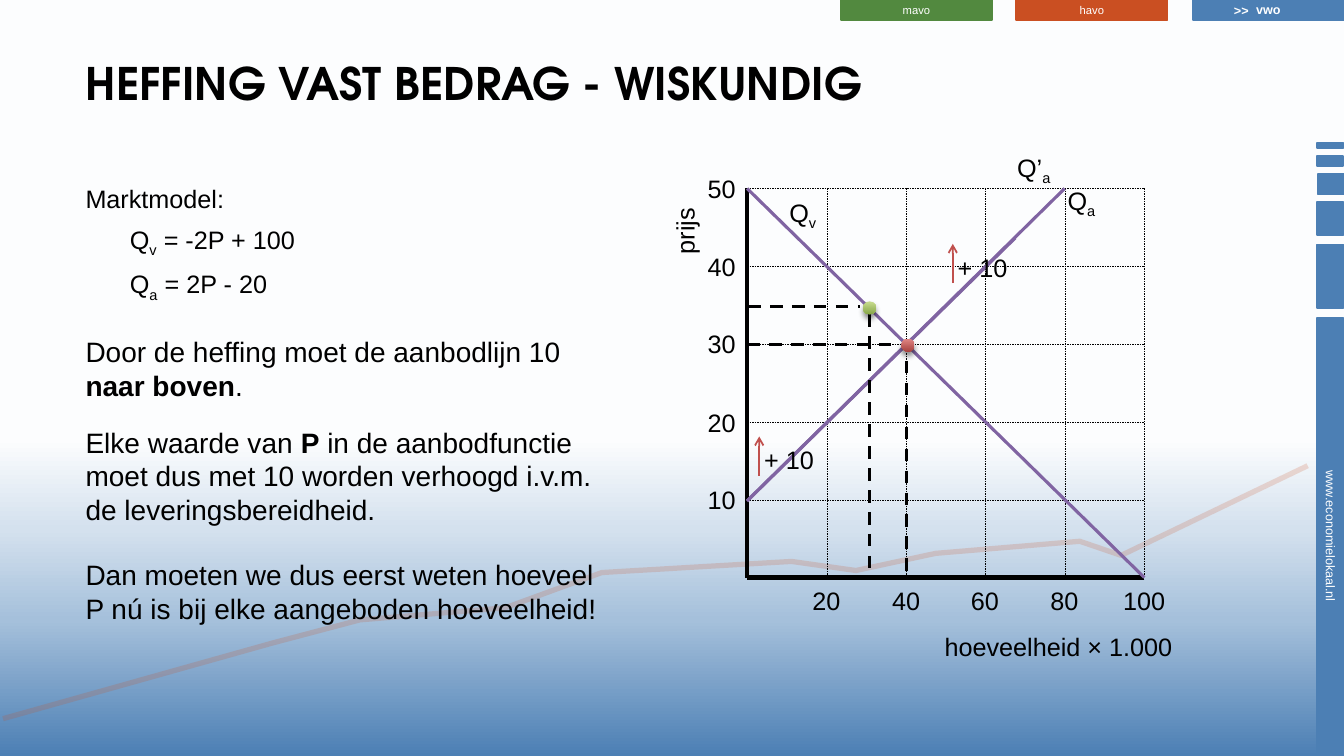
from dataclasses import dataclass

from lxml import etree
from pptx import Presentation
from pptx.dml.color import RGBColor
from pptx.enum.dml import MSO_LINE
from pptx.enum.shapes import MSO_CONNECTOR, MSO_SHAPE
from pptx.enum.text import MSO_ANCHOR, MSO_AUTO_SIZE, PP_ALIGN
from pptx.oxml.ns import qn
from pptx.util import Pt

PX = 9144  # EMU per px, 100 px to the inch
RECTANGLE, OVAL = MSO_SHAPE.RECTANGLE, MSO_SHAPE.OVAL
STRAIGHT, DASH = MSO_CONNECTOR.STRAIGHT, MSO_LINE.DASH
CENTER, MIDDLE = PP_ALIGN.CENTER, MSO_ANCHOR.MIDDLE
FIT_SHAPE = MSO_AUTO_SIZE.SHAPE_TO_FIT_TEXT


@dataclass(frozen=True)
class Theme:
    black: str = "000000"
    white: str = "FFFFFF"
    blue: str = "4C7FB4"
    orange: str = "CA4F22"
    green: str = "52893F"
    curve: str = "8064A2"
    arrow: str = "C0504D"
    sky: tuple = ((0, "4C7FB4"), (18, "A5C0DB"), (30, "D4E1EE"), (42, "FCFDFE"), (50, "FFFFFF"))
    green_dot: tuple = ((0, "C9DD90"), (100, "86A547"))
    red_dot: tuple = ((0, "E18785"), (100, "A7423F"))
    font: str = "Arial"
    title_font: str = "TeX Gyre Adventor"
    title: int = 32
    body: int = 20
    label: int = 18
    tab: int = 9
    small_tab: int = 8


@dataclass(frozen=True)
class Piece:
    text: str
    bold: bool = False
    subscript: bool = False


@dataclass(frozen=True)
class BodyParagraph:
    pieces: tuple
    size: int
    before: float = 0
    indent: int = 0


@dataclass(frozen=True)
class Bar:
    left: int
    top: int
    width: int
    height: int
    color: str
    text: str = ""
    size: int = 9
    bold: bool = False
    rotation: int = 0


@dataclass(frozen=True)
class Label:
    left: int
    top: int
    width: int
    pieces: tuple
    rotation: int = 0


THEME = Theme()
AXIS_X, AXIS_Y, CHART_RIGHT, CHART_TOP = 741, 573, 1135, 187
PRICES, QUANTITIES = range(10, 51, 10), range(20, 101, 20)

TABS = (
    Bar(1183, 0, 150, 20, THEME.blue, "vwo", THEME.tab, True),
    Bar(1008, 0, 150, 20, THEME.orange, "havo", THEME.small_tab),
    Bar(834, 0, 150, 20, THEME.green, "mavo", THEME.small_tab),
)
# Centre height, length and text of the bars down the right edge
SIDE_BARS = ((532, 433, "www.economielokaal.nl"), (274, 63, ""), (217, 33, ""),
             (183, 20, ""), (160, 10, ""), (144, 5, ""))
TREND = ((1297, 462), (1112, 551), (1071, 537), (928, 549), (849, 566), (785, 557),
         (597, 568), (501, 603), (357, 615), (270, 638), (3, 713))
BODY = (
    BodyParagraph((Piece("Marktmodel:"),), THEME.label),
    BodyParagraph((Piece("Q"), Piece("v", subscript=True), Piece(" = -2P + 100")), THEME.label, 4, 44),
    BodyParagraph((Piece("Q"), Piece("a", subscript=True), Piece(" = 2P - 20")), THEME.label, 4, 44),
    BodyParagraph((Piece("Door de heffing moet de aanbodlijn 10 "), Piece("naar boven", True),
                   Piece(".")), THEME.body, 19),
    BodyParagraph((Piece("Elke waarde van "), Piece("P", True),
                   Piece(" in de aanbodfunctie moet dus met 10 worden verhoogd i.v.m. "
                         "de leveringsbereidheid.")), THEME.body, 13.5),
    BodyParagraph((Piece("Dan moeten we dus eerst weten hoeveel P nú is bij elke "
                         "aangeboden hoeveelheid!"),), THEME.body, 19),
)
CHART_LABELS = (
    Label(927, 621, 248, (Piece("hoeveelheid × 1.000"),)),
    Label(646, 209, 66, (Piece("prijs"),), 270),
    Label(773, 191, 48, (Piece("Q"), Piece("v", subscript=True))),
    Label(1049, 179, 49, (Piece("Q"), Piece("a", subscript=True))),
    Label(999, 146, 55, (Piece("Q’"), Piece("a", subscript=True))),
)
CURVES = ((741, 187, 1135, 573), (741, 497, 1056, 187), (741, 497, 1007, 236))
GUIDES = ((741, 342, 899, 342), (742, 304, 853, 304), (899, 358, 899, 573), (862, 312, 862, 573))
DOTS = ((856, 299, THEME.green_dot), (894, 336, THEME.red_dot))
SHIFTS = ((753, 433), (945, 242))


def rgb(color: str) -> RGBColor:
    return RGBColor.from_string(color)


def set_gradient(fill, owner, stops: tuple, angle: int) -> None:
    fill.gradient()
    fill.gradient_angle = angle
    stop_list = owner.find(".//" + qn("a:gsLst"))
    for old_stop in list(stop_list):
        stop_list.remove(old_stop)
    for position, color in stops:
        stop = etree.SubElement(stop_list, qn("a:gs"), pos=str(position * 1000))
        etree.SubElement(stop, qn("a:srgbClr"), val=color)


def add_pieces(paragraph, pieces: tuple, size: int, color: str = THEME.black,
               font_name: str = THEME.font) -> None:
    for piece in pieces:
        run = paragraph.add_run()
        run.text = piece.text
        font = run.font
        font.name, font.size, font.bold = font_name, Pt(size), piece.bold
        font.color.rgb = rgb(color)
        if piece.subscript:
            run._r.get_or_add_rPr().set("baseline", "-25000")


def add_text_box(slide, left: int, top: int, width: int, height: int, wrap: bool = True):
    box = slide.shapes.add_textbox(left * PX, top * PX, width * PX, height * PX)
    box.text_frame.word_wrap = wrap
    if not wrap:
        box.text_frame.auto_size = FIT_SHAPE
    return box


def add_label(slide, label: Label) -> None:
    box = add_text_box(slide, label.left, label.top, label.width, 40, wrap=False)
    box.rotation = label.rotation
    add_pieces(box.text_frame.paragraphs[0], label.pieces, THEME.label)


def add_bar(slide, bar: Bar) -> None:
    shape = slide.shapes.add_shape(RECTANGLE, bar.left * PX, bar.top * PX, bar.width * PX, bar.height * PX)
    shape.shadow.inherit = False
    shape.rotation = bar.rotation
    shape.fill.solid()
    shape.fill.fore_color.rgb = shape.line.color.rgb = rgb(bar.color)
    shape.line.width = Pt(1.25)
    if bar.text:
        frame = shape.text_frame
        frame.margin_top, frame.margin_bottom = 0, PX
        frame.vertical_anchor = MIDDLE
        frame.paragraphs[0].alignment = CENTER
        add_pieces(frame.paragraphs[0], (Piece(bar.text, bar.bold),), bar.size, THEME.white)


def add_line(slide, ends: tuple, color: str, width: float, dashed: bool = False, arrow: bool = False) -> None:
    line = slide.shapes.add_connector(STRAIGHT, *(end * PX for end in ends))
    line.line.color.rgb = rgb(color)
    line.line.width = Pt(width)
    if dashed:
        line.line.dash_style = DASH
    if arrow:
        etree.SubElement(line.line._get_or_add_ln(), qn("a:tailEnd"), type="arrow")
    etree.SubElement(line.element.spPr, qn("a:effectLst"))


def add_dot(slide, left: int, top: int, stops: tuple) -> None:
    dot = slide.shapes.add_shape(OVAL, left * PX, top * PX, 13 * PX, 13 * PX)
    set_gradient(dot.fill, dot.element, stops, 270)
    dot.line.fill.background()
    dot.shadow.inherit = False
    effects = dot.element.spPr.find(qn("a:effectLst"))
    shadow = etree.SubElement(effects, qn("a:outerShdw"), blurRad=str(Pt(4)), dist=str(Pt(3)),
                              dir="5400000", rotWithShape="0")
    color = etree.SubElement(shadow, qn("a:srgbClr"), val=THEME.black)
    etree.SubElement(color, qn("a:alpha"), val="46000")


def add_trend(slide) -> None:
    builder = slide.shapes.build_freeform(*TREND[0], scale=PX)
    builder.add_line_segments(TREND[1:], close=False)
    trend = builder.convert_to_shape()
    trend.shadow.inherit = False
    trend.fill.background()
    trend.line.color.rgb = rgb(THEME.orange)
    trend.line.width = Pt(3.75)
    color = trend.line._get_or_add_ln().find(".//" + qn("a:srgbClr"))
    etree.SubElement(color, qn("a:alpha"), val="19000")


def add_body(slide) -> None:
    frame = add_text_box(slide, 75, 177, 540, 515).text_frame
    for index, content in enumerate(BODY):
        paragraph = frame.add_paragraph() if index else frame.paragraphs[0]
        paragraph.space_before, paragraph.space_after = Pt(content.before), Pt(3.4)
        if content.indent:
            paragraph._p.get_or_add_pPr().set("marL", str(content.indent * PX))
        add_pieces(paragraph, content.pieces, content.size)


def add_market_chart(slide) -> None:
    # Axes, grid and scale labels
    add_line(slide, (AXIS_X, CHART_TOP, AXIS_X, AXIS_Y), THEME.black, 3)
    add_line(slide, (CHART_RIGHT, AXIS_Y, AXIS_X, AXIS_Y), THEME.black, 3)
    for price in PRICES:
        y = round(AXIS_Y - price * (AXIS_Y - CHART_TOP) / 50)
        add_line(slide, (AXIS_X, y, CHART_RIGHT, y), THEME.black, 0.25, dashed=True)
        add_label(slide, Label(692, y - 20, 48, (Piece(str(price)),)))
    for quantity in QUANTITIES:
        x = round(AXIS_X + quantity * (CHART_RIGHT - AXIS_X) / 100)
        width = 62 if quantity == 100 else 48
        add_line(slide, (x, CHART_TOP, x, AXIS_Y), THEME.black, 0.25, dashed=True)
        add_label(slide, Label(x - width // 2, 576, width, (Piece(str(quantity)),)))
    # Curves, equilibria and shift arrows
    for curve in CURVES:
        add_line(slide, curve, THEME.curve, 2.25)
    for label in CHART_LABELS:
        add_label(slide, label)
    for guide in GUIDES:
        add_line(slide, guide, THEME.black, 2.25, dashed=True)
    for dot in DOTS:
        add_dot(slide, *dot)
    for x, top in SHIFTS:
        add_line(slide, (x, top + 39, x, top), THEME.arrow, 1.25, arrow=True)
        add_label(slide, Label(x - 5, top + 3, 70, (Piece("+ 10"),)))


def main() -> None:
    presentation = Presentation()
    presentation.slide_width, presentation.slide_height = 1333 * PX, 750 * PX
    slide = presentation.slides.add_slide(presentation.slide_layouts[6])
    set_gradient(slide.background.fill, slide.element, THEME.sky, 90)
    # Level tabs and side bars
    for tab in TABS:
        add_bar(slide, tab)
    for center, length, text in SIDE_BARS:
        add_bar(slide, Bar(round((2639 - length) / 2), center - 13, length, 26, THEME.blue, text, rotation=90))
    add_trend(slide)
    marker = add_text_box(slide, 1214, -2, 35, 25, wrap=False)
    add_pieces(marker.text_frame.paragraphs[0], (Piece(">>", True),), THEME.tab, THEME.white)
    # Title and explanation
    title = add_text_box(slide, 75, 50, 1002, 89)
    add_pieces(title.text_frame.paragraphs[0], (Piece("HEFFING VAST BEDRAG - WISKUNDIG", True),),
               THEME.title, font_name=THEME.title_font)
    add_body(slide)
    add_market_chart(slide)
    presentation.save("out.pptx")


if __name__ == "__main__":
    main()
